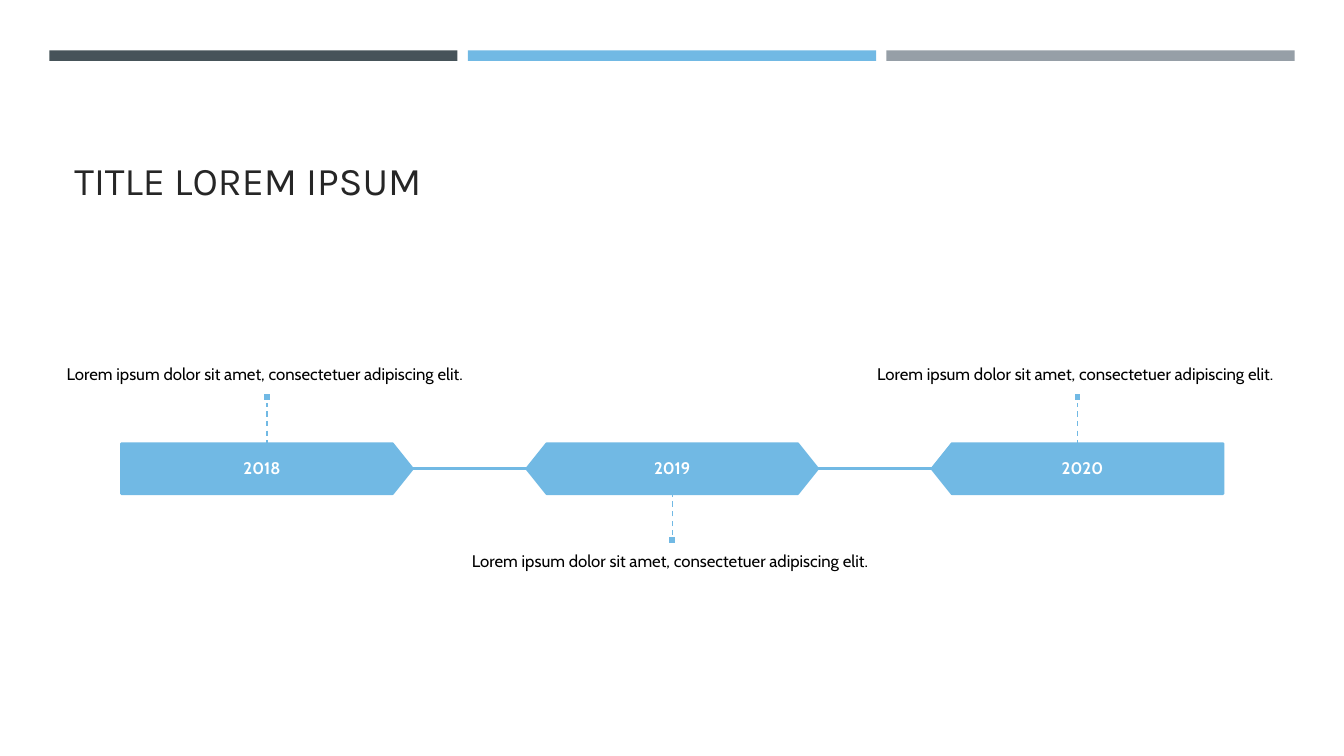
from dataclasses import dataclass

from lxml import etree
from pptx import Presentation
from pptx.dml.color import RGBColor
from pptx.enum.dml import MSO_LINE
from pptx.enum.shapes import MSO_CONNECTOR, MSO_SHAPE
from pptx.enum.text import MSO_ANCHOR, PP_ALIGN
from pptx.oxml.ns import qn
from pptx.util import Pt

RECT, PLATE, HEX = MSO_SHAPE.RECTANGLE, MSO_SHAPE.PENTAGON, MSO_SHAPE.HEXAGON
LINE, DASH = MSO_CONNECTOR.STRAIGHT, MSO_LINE.DASH
TOP, MID, LOW = MSO_ANCHOR.TOP, MSO_ANCHOR.MIDDLE, MSO_ANCHOR.BOTTOM
LEFT, CENTER = PP_ALIGN.LEFT, PP_ALIGN.CENTER


@dataclass(frozen=True)
class Theme:
    dark: str = "465359"
    blue: str = "71B9E4"
    gray: str = "969FA7"
    ink: str = "262626"
    black: str = "000000"
    white: str = "FFFFFF"
    head: str = "Karla"
    body: str = "Cabin"
    big: float = 28
    small: float = 12
    thick: float = 1.75
    thin: float = 1


THEME = Theme()
NOTE = "Lorem ipsum dolor sit amet, consectetuer adipiscing elit. "
# Year, shape, mirrored, caption above
STAGES = [
    ("2018", PLATE, False, True),
    ("2019", HEX, False, False),
    ("2020", PLATE, True, True),
]


def rgb(code):
    return RGBColor.from_string(code)


def write(shape, text, font, size, color, align, anchor, bold=False, pad=(0, 0)):
    frame = shape.text_frame
    frame.text = text
    frame.word_wrap = True
    frame.vertical_anchor = anchor
    frame.margin_left = frame.margin_right = Pt(pad[0])
    frame.margin_top = frame.margin_bottom = Pt(pad[1])
    para = frame.paragraphs[0]
    para.alignment = align
    para.line_spacing = 0.9
    face = para.runs[0].font
    face.name, face.size, face.bold = font, Pt(size), bold
    face.color.rgb = rgb(color)


def block(slide, kind, x, y, w, h, fill, edge=None):
    shape = slide.shapes.add_shape(kind, Pt(x), Pt(y), Pt(w), Pt(h))
    shape.shadow.inherit = False
    shape.fill.solid()
    shape.fill.fore_color.rgb = rgb(fill)
    if edge:
        shape.line.color.rgb = rgb(edge)
        shape.line.width = Pt(THEME.thick)
    else:
        shape.line.fill.background()
    return shape


def wire(slide, x1, y1, x2, y2, width, dash=None):
    line = slide.shapes.add_connector(LINE, Pt(x1), Pt(y1), Pt(x2), Pt(y2))
    line.line.color.rgb = rgb(THEME.blue)
    line.line.width = Pt(width)
    line.line.dash_style = dash
    etree.SubElement(line._element.spPr, qn("a:effectLst"))
    return line


# Three colour bars along the top
def bars(slide, x, y, w, h):
    gap = 7.4
    wide = (w - 2 * gap) / 3
    for i, color in enumerate((THEME.dark, THEME.blue, THEME.gray)):
        block(slide, RECT, x + i * (wide + gap), y, wide, h, color)


def title(slide, x, y, w, h):
    head = slide.shapes.title
    head.left, head.top, head.width, head.height = Pt(x), Pt(y), Pt(w), Pt(h)
    write(head, "TITLE LOREM IPSUM", THEME.head, THEME.big, THEME.ink,
          LEFT, LOW, pad=(7.2, 3.6))


# Caption with its dashed stem and square marker
def label(slide, x, y, w, h, above):
    stem, dot, tall = 30, 6, 96
    mid = x + w / 2
    edge = y if above else y + h
    tip = edge - stem if above else edge + stem
    dot_y = tip - dot if above else tip
    box_y = dot_y - tall if above else dot_y + dot
    box = slide.shapes.add_textbox(Pt(x), Pt(box_y), Pt(w), Pt(tall))
    write(box, NOTE, THEME.body, THEME.small, THEME.black, CENTER,
          LOW if above else TOP, pad=(0, 8.64))
    line = wire(slide, mid, tip, mid, edge, THEME.thin, DASH)
    mark = block(slide, RECT, mid - dot / 2, dot_y, dot, dot,
                 THEME.blue, THEME.white)
    line.begin_connect(mark, 2 if above else 0)


# Year blocks spread evenly over the box, with links between them
def timeline(slide, x, y, w, h):
    step = w / len(STAGES)
    wide = 208
    for i, (year, kind, flip, above) in enumerate(STAGES):
        left = x + i * step
        inner = left + (step - wide) / 2
        if i:
            wire(slide, inner - step + wide, y + h / 2, inner, y + h / 2,
                 THEME.thick)
        stage = block(slide, kind, inner, y, wide, h, THEME.blue, THEME.blue)
        stage.adjustments[0] = 0.4
        if flip:
            stage._element.spPr.xfrm.set("flipH", "1")
        write(stage, year, THEME.body, THEME.small, THEME.white, CENTER, MID,
              bold=True)
        label(slide, left, y, step, h, above)


def main():
    deck = Presentation()
    deck.slide_width, deck.slide_height = Pt(960), Pt(540)
    slide = deck.slides.add_slide(deck.slide_layouts[5])
    bars(slide, 35.2, 36, 889.6, 7.6)
    title(slide, 46, 55.4, 868.4, 93.6)
    timeline(slide, 46, 316.8, 868.4, 36)
    deck.save("out.pptx")


if __name__ == "__main__":
    main()
